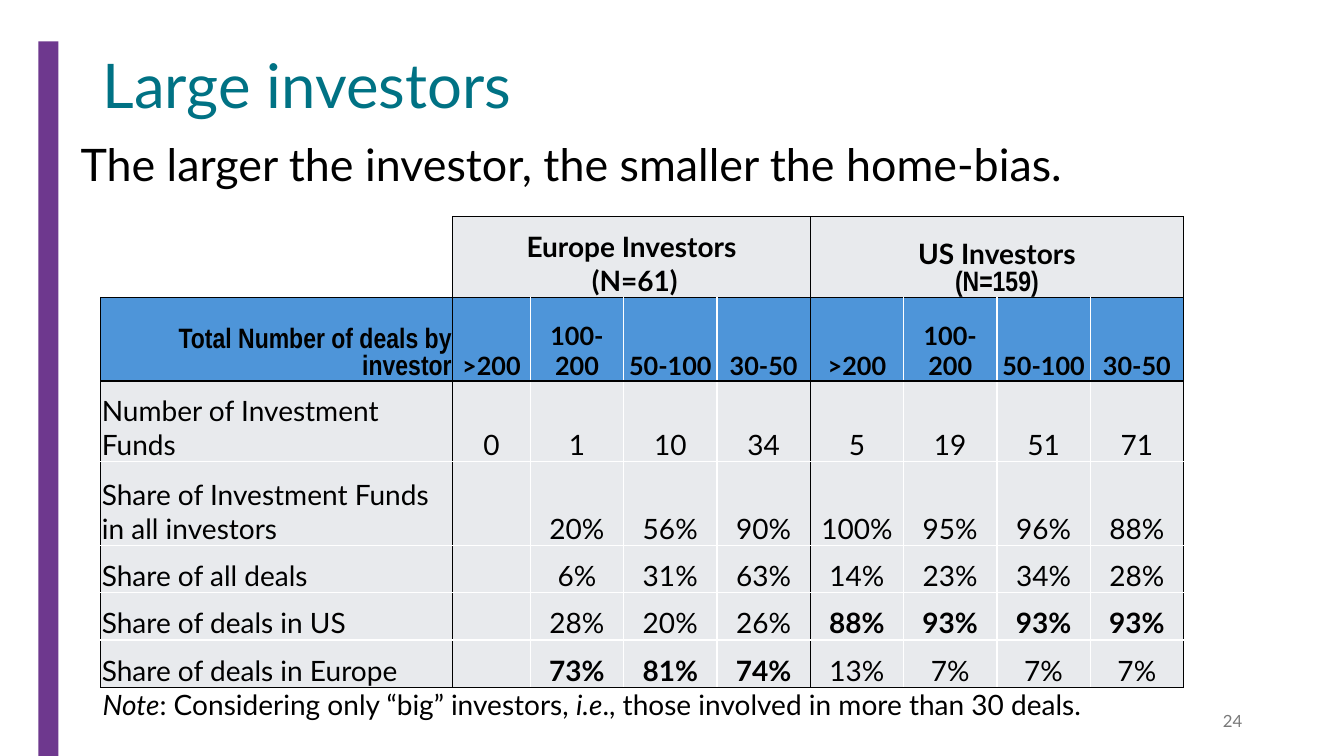
from dataclasses import dataclass

from lxml import etree
from pptx import Presentation
from pptx.dml.color import RGBColor
from pptx.enum.shapes import MSO_SHAPE
from pptx.enum.text import MSO_ANCHOR, PP_ALIGN
from pptx.oxml.ns import qn
from pptx.util import Pt

RECTANGLE = MSO_SHAPE.RECTANGLE
MIDDLE, BOTTOM = MSO_ANCHOR.MIDDLE, MSO_ANCHOR.BOTTOM
LEFT, CENTER, RIGHT = PP_ALIGN.LEFT, PP_ALIGN.CENTER, PP_ALIGN.RIGHT
EMU_PER_PX = 9144


@dataclass(frozen=True)
class Theme:
    font: str = "Lato"
    narrow: str = "Arial Narrow"
    purple: str = "6E388E"
    teal: str = "007284"
    gray: str = "797979"
    black: str = "000000"
    white: str = "FFFFFF"
    blue: str = "4E95D9"
    pale: str = "E8EAED"
    title: int = 44
    subtitle: int = 32
    body: int = 20
    heading: int = 18
    number: int = 12
    border: int = 1


THEME = Theme()

HEADINGS = [">200", "100-200", "50-100", "30-50"]
ROWS = [
    ("Number of Investment Funds", "0 1 10 34 5 19 51 71".split()),
    ("Share of Investment Funds in all investors",
     ["", *"20% 56% 90% 100% 95% 96% 88%".split()]),
    ("Share of all deals", ["", *"6% 31% 63% 14% 23% 34% 28%".split()]),
    ("Share of deals in US", ["", *"28% 20% 26% 88% 93% 93% 93%".split()]),
    ("Share of deals in Europe", ["", *"73% 81% 74% 13% 7% 7% 7%".split()]),
]
HOME_SHARES = {5: range(5, 9), 6: range(2, 5)}
ROW_HEIGHTS = [80, 83, 80, 83, 47, 47, 47]
LABEL_WIDTH, FIRST_WIDTH = 349, 77


def px(length):
    return length * EMU_PER_PX


def add_run(paragraph, text, size, color=THEME.black, font=THEME.font,
            bold=False, italic=False):
    run = paragraph.add_run()
    run.text = text
    run.font.size = Pt(size)
    run.font.name = font
    run.font.bold = bold
    run.font.italic = italic
    run.font.color.rgb = RGBColor.from_string(color)


def add_text_box(slide, box, align=LEFT, line_spacing=0.9):
    frame = slide.shapes.add_textbox(*map(px, box)).text_frame
    frame.word_wrap = True
    frame.vertical_anchor = MIDDLE
    paragraph = frame.paragraphs[0]
    paragraph.alignment = align
    paragraph.line_spacing = line_spacing
    return paragraph


def add_side_bar(slide, box):
    bar = slide.shapes.add_shape(RECTANGLE, *map(px, box))
    bar.shadow.inherit = False
    bar.fill.solid()
    bar.fill.fore_color.rgb = RGBColor.from_string(THEME.purple)
    bar.line.fill.background()


def add_title(slide, box):
    add_run(add_text_box(slide, box), "Large investors", THEME.title, THEME.teal)


def add_subtitle(slide, box):
    add_run(add_text_box(slide, box),
            "The larger the investor, the smaller the home-bias.", THEME.subtitle)


def add_note(slide, box):
    paragraph = add_text_box(slide, box)
    for text, italic in [
        ("Note", True),
        (": Considering only “big” investors, ", False),
        ("i.e", True),
        ("., those involved in more than 30 deals.", False),
    ]:
        add_run(paragraph, text, THEME.body, italic=italic)


def add_page_number(slide, box):
    paragraph = add_text_box(slide, box, RIGHT, 1.0)
    paragraph.space_after = Pt(6)
    add_run(paragraph, "24", THEME.number, THEME.gray)


def border_colors(row, column):
    group_row = row == 0 and column > 0
    corner = row == column == 0
    black_sides = {
        "lnL": group_row or (column in (0, 1, 5) and not corner),
        "lnR": group_row or column in (0, 4, 8),
        "lnT": row <= 2 and not corner,
        "lnB": row in (0, 1, 6),
    }
    return {side: THEME.black if black else THEME.white
            for side, black in black_sides.items()}


def style_cell(cell, row, column):
    cell.vertical_anchor = BOTTOM
    cell.margin_left = cell.margin_right = cell.margin_top = px(1)
    cell.margin_bottom = 0
    properties = cell._tc.get_or_add_tcPr()
    for side, color in border_colors(row, column).items():
        line = etree.SubElement(properties, qn(f"a:{side}"), w=str(Pt(THEME.border)))
        fill = etree.SubElement(line, qn("a:solidFill"))
        etree.SubElement(fill, qn("a:srgbClr"), val=color)
    if row == column == 0:
        cell.fill.background()
    else:
        cell.fill.solid()
        color = THEME.blue if row == 1 else THEME.pale
        cell.fill.fore_color.rgb = RGBColor.from_string(color)


def write_cell(cell, text, align=CENTER, size=THEME.body, **style):
    paragraph = cell.text_frame.paragraphs[0]
    paragraph.alignment = align
    if text:
        add_run(paragraph, text, size, **style)


def add_investor_table(slide, box):
    left, top, width, height = box
    table = slide.shapes.add_table(
        len(ROW_HEIGHTS), 1 + 2 * len(HEADINGS), *map(px, box)).table
    table.first_row = table.horz_banding = False
    other_width = px(width - LABEL_WIDTH - FIRST_WIDTH) // 7
    widths = [px(LABEL_WIDTH), px(FIRST_WIDTH)] + [other_width] * 7
    for column, column_width in zip(table.columns, widths):
        column.width = column_width
    for row, row_height in zip(table.rows, ROW_HEIGHTS):
        row.height = px(row_height)
    for row in range(len(ROW_HEIGHTS)):
        for column in range(len(widths)):
            style_cell(table.cell(row, column), row, column)

    for column, name, count, font in [
        (1, "Europe Investors", " (N=61)", THEME.font),
        (5, "US Investors", "(N=159)", THEME.narrow),
    ]:
        cell = table.cell(0, column)
        cell.merge(table.cell(0, column + 3))
        write_cell(cell, name, bold=True)
        paragraph = cell.text_frame.add_paragraph()
        paragraph.alignment = CENTER
        add_run(paragraph, count, THEME.body, font=font, bold=True)

    write_cell(table.cell(1, 0), "Total Number of deals by investor", RIGHT,
               font=THEME.narrow, bold=True)
    for column, heading in enumerate(HEADINGS * 2, 1):
        write_cell(table.cell(1, column), heading, size=THEME.heading, bold=True)
    for row, (label, values) in enumerate(ROWS, 2):
        write_cell(table.cell(row, 0), label, LEFT)
        for column, value in enumerate(values, 1):
            write_cell(table.cell(row, column), value,
                       bold=column in HOME_SHARES.get(row, ()))


def main():
    presentation = Presentation()
    presentation.slide_width, presentation.slide_height = px(1333), px(750)
    slide = presentation.slides.add_slide(presentation.slide_layouts[6])
    add_side_bar(slide, (38, 41, 20, 709))
    add_title(slide, (92, 40, 1150, 96))
    add_page_number(slide, (942, 695, 300, 40))
    add_investor_table(slide, (100, 215, 1074, 467))
    add_note(slide, (92, 667, 1129, 68))
    add_subtitle(slide, (70, 118, 1188, 96))
    presentation.save("out.pptx")


if __name__ == "__main__":
    main()
